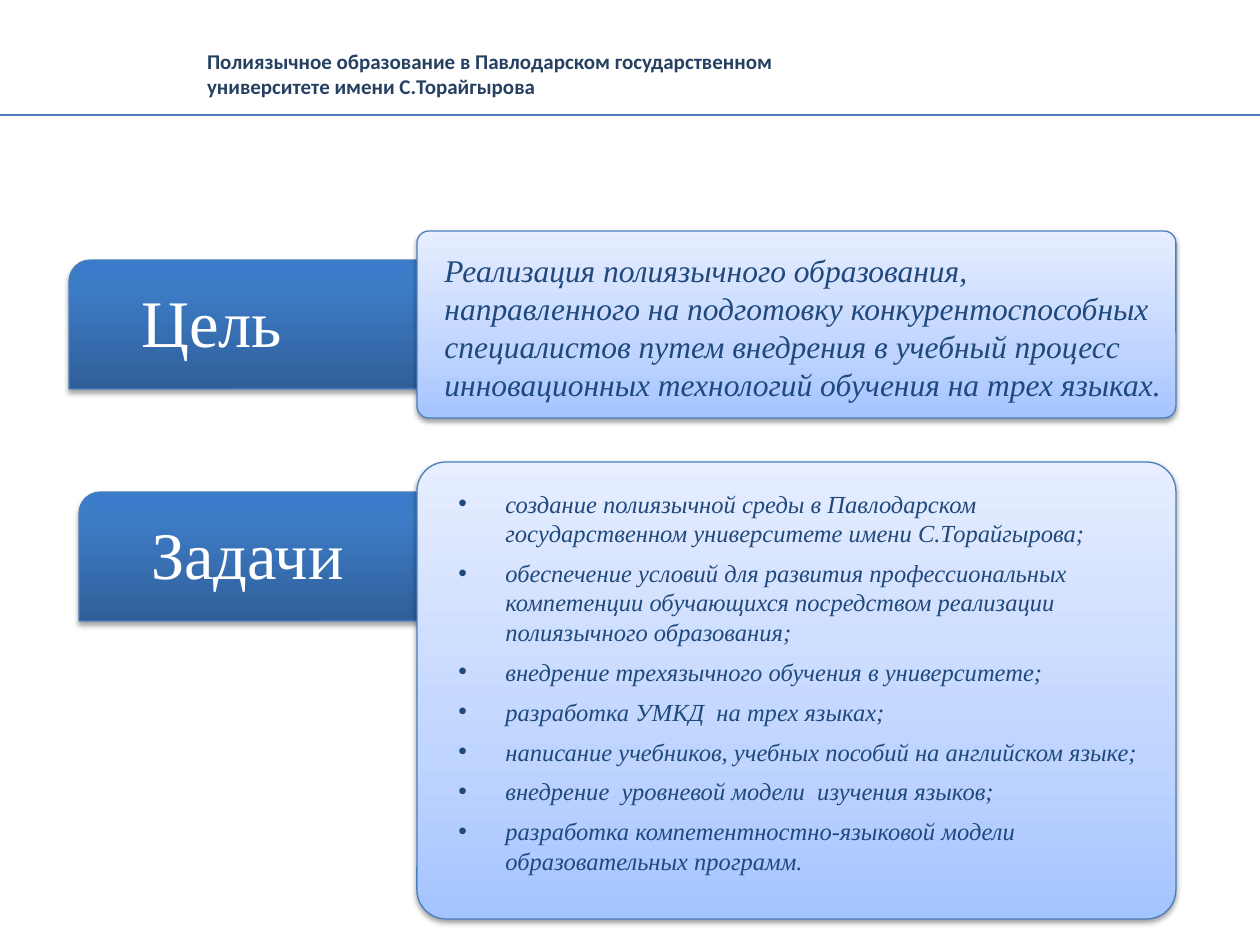
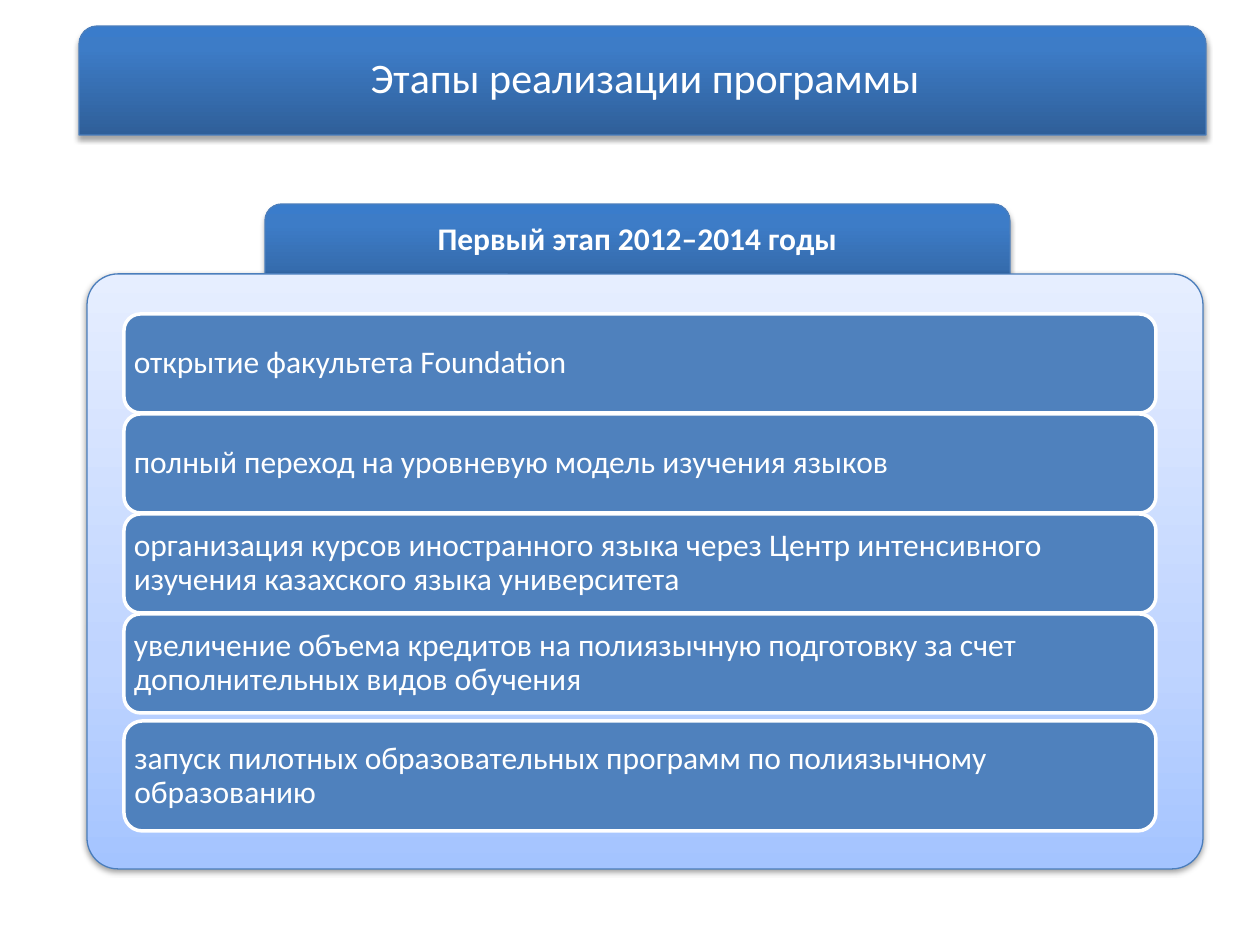
from lxml.etree import SubElement
from pptx import Presentation
from pptx.dml.color import RGBColor
from pptx.enum.shapes import MSO_CONNECTOR, MSO_SHAPE as Form
from pptx.enum.text import MSO_ANCHOR as Anchor, MSO_AUTO_SIZE as AutoSize, PP_ALIGN as Align
from pptx.oxml.ns import qn
from pptx.util import Emu, Pt

EMU_PER_PX = 914400 / 126
COLOURS = {
    "white": "FFFFFF", "row": "4F81BD", "edge": "4B7EBC", "shadow": "000000",
    "header": "254061", "text": "1F497D",
}
GRADIENTS = {
    "label": ((0, "2F5F99"), (80, "3D7CC7"), (100, "3A7CCB")),
    "panel": ((0, "A4C4FF"), (35, "BFD4FF"), (100, "E6EEFF")),
}
SHADOWS = {"label": (35, 1.8), "panel": (38, 1.6)}
SERIF = "Times New Roman"
SANS = "Calibri"
FORMATS = {
    "header": {"name": SANS, "size": Pt(12), "bold": True, "color": "header"},
    "heading": {"name": SANS, "size": Pt(24), "bold": False, "color": "white"},
    "label": {"name": SERIF, "size": Pt(38), "color": "white"},
    "goal": {"name": SERIF, "size": Pt(18), "italic": True, "color": "text"},
    "task": {"name": SERIF, "size": Pt(14), "italic": True, "color": "text"},
    "stage": {"name": SANS, "size": Pt(18), "bold": True, "color": "white"},
    "step": {"name": SANS, "size": Pt(18), "color": "white"},
}
HEADER = [
    "Полиязычное образование в Павлодарском государственном",
    "университете имени С.Торайгырова",
]
GOAL = (
    "Реализация полиязычного образования, направленного на подготовку "
    "конкурентоспособных специалистов путем внедрения в учебный процесс "
    "инновационных технологий обучения на трех языках."
)
TASKS = [
    "создание полиязычной среды в Павлодарском государственном университете имени С.Торайгырова;",
    "обеспечение условий для развития профессиональных компетенции обучающихся "
    "посредством реализации полиязычного образования;",
    "внедрение трехязычного обучения в университете;",
    "разработка УМКД  на трех языках;",
    "написание учебников, учебных пособий на английском языке;",
    "внедрение  уровневой модели  изучения языков;",
    "разработка компетентностно-языковой модели образовательных программ.",
]
STEPS = [
    "открытие факультета Foundation",
    "полный переход на уровневую модель изучения языков",
    "организация курсов иностранного языка через Центр интенсивного "
    "изучения казахского языка университета",
    "увеличение объема кредитов на полиязычную подготовку за счет дополнительных видов обучения",
    "запуск пилотных образовательных программ по полиязычному образованию",
]


def px(value):
    """Turn a length in px into EMU."""
    return Emu(round(value * EMU_PER_PX))


def rgb(name):
    """Look up a palette colour."""
    return RGBColor.from_string(COLOURS[name])


def set_values(target, values):
    """Set each named attribute on the target."""
    for name, value in values.items():
        setattr(target, name, value)


def add_bullet(para):
    """Give a paragraph a hanging round bullet."""
    properties = para._p.get_or_add_pPr()
    properties.set("marL", str(px(47)))
    properties.set("indent", str(-px(47)))
    SubElement(properties, qn("a:buFont"), typeface="Arial")
    SubElement(properties, qn("a:buChar"), char="•")


def write(shape, lines, style, insets=(13, 6, 13, 6), anchor=Anchor.TOP,
          align=Align.LEFT, spacing=1.0, bullets=False):
    """Fill a shape with formatted paragraphs."""
    frame = shape.text_frame
    left, top, right, bottom = map(px, insets)
    set_values(frame, {
        "word_wrap": True, "auto_size": AutoSize.NONE, "vertical_anchor": anchor,
        "margin_left": left, "margin_top": top, "margin_right": right, "margin_bottom": bottom,
    })
    for index, line in enumerate(lines):
        para = frame.add_paragraph() if index else frame.paragraphs[0]
        set_values(para, {"alignment": align, "line_spacing": spacing})
        if bullets:
            if index:
                para.space_before = Pt(6)
            add_bullet(para)
        span = para.add_run()
        span.text = line
        values = dict(FORMATS[style])
        span.font.color.rgb = rgb(values.pop("color"))
        set_values(span.font, values)


def add_form(slide, form, place, edge, width, corner=None):
    """Add an outlined preset shape without the theme shadow."""
    shape = slide.shapes.add_shape(form, *map(px, place))
    shape.shadow.inherit = False
    shape.line.color.rgb = rgb(edge)
    shape.line.width = Pt(width)
    if corner is not None:
        shape.adjustments[0] = corner
    return shape


def add_glossy(slide, form, place, look, corner=None):
    """Add a shape with a vertical gradient and a soft shadow below."""
    shape = add_form(slide, form, place, "edge", 0.75, corner)
    shape.fill.gradient()
    shape.fill.gradient_angle = 90
    properties = shape._element.spPr
    stops = properties.find(qn("a:gradFill")).find(qn("a:gsLst"))
    stops.clear()
    for position, colour in GRADIENTS[look]:
        stop = SubElement(stops, qn("a:gs"), pos=str(position * 1000))
        SubElement(stop, qn("a:srgbClr"), val=colour)
    alpha, distance = SHADOWS[look]
    shadow = SubElement(properties.find(qn("a:effectLst")), qn("a:outerShdw"),
                        blurRad=str(Pt(3.1)), dist=str(Pt(distance)), dir="5400000", rotWithShape="0")
    tint = SubElement(shadow, qn("a:srgbClr"), val=COLOURS["shadow"])
    SubElement(tint, qn("a:alpha"), val=str(alpha * 1000))
    return shape


def add_label(slide, text, left, top):
    """Add a section label with one rounded corner."""
    label = add_glossy(slide, Form.ROUND_2_DIAG_RECTANGLE, (left, top, 465, 129), "label")
    write(label, [text], "label", insets=(66, 15, 0, 0))


def add_rule(slide, top):
    """Draw a full-width line under the header."""
    rule = slide.shapes.add_connector(MSO_CONNECTOR.STRAIGHT, px(1260), px(top), px(0), px(top))
    rule.line.color.rgb = rgb("edge")
    rule.line.width = Pt(1)
    SubElement(rule._element.spPr, qn("a:effectLst"))


def add_step(slide, text, top, height):
    """Add one outlined row of the stage."""
    row = add_form(slide, Form.ROUNDED_RECTANGLE, (124, top, 1032, height), "white", 2)
    row.fill.solid()
    row.fill.fore_color.rgb = rgb("row")
    write(row, [text], "step", insets=(5, 0, 90, 0), anchor=Anchor.MIDDLE, spacing=0.9)


def place_title(slide, lines, place, style, align=Align.LEFT):
    """Move, format and bring forward the title placeholder."""
    title = slide.shapes.title
    set_values(title, dict(zip(("left", "top", "width", "height"), map(px, place))))
    write(title, lines, style, align=align)
    slide.shapes._spTree.append(title._element)


def build_goals(slide):
    """Build the slide with the goal and the tasks."""
    place_title(slide, HEADER, (194, 42, 932, 63), "header")
    add_rule(slide, 115)
    add_label(slide, "Цель", 69, 260)
    add_label(slide, "Задачи", 79, 492)
    goal = add_glossy(slide, Form.ROUNDED_RECTANGLE, (417, 231, 759, 187), "panel", 0.064)
    write(goal, [GOAL], "goal", insets=(24, 17, 6, 0))
    tasks = add_glossy(slide, Form.ROUNDED_RECTANGLE, (417, 462, 759, 457), "panel", 0.064)
    write(tasks, TASKS, "task", insets=(33, 18, 4, 0), bullets=True)


def build_stages(slide):
    """Build the slide with the steps of the first stage."""
    add_glossy(slide, Form.ROUND_2_SAME_RECTANGLE, (79, 26, 1127, 109), "label")
    place_title(slide, ["Этапы реализации программы"], (139, 45, 1012, 63), "heading", Align.CENTER)
    stage = add_glossy(slide, Form.ROUNDED_RECTANGLE, (265, 204, 745, 101), "label")
    write(stage, ["Первый этап 2012–2014 годы"], "stage", insets=(0, 10, 0, 0), align=Align.CENTER)
    add_glossy(slide, Form.ROUNDED_RECTANGLE, (87, 274, 1116, 595), "panel", 0.052)
    for index, step in enumerate(STEPS[:-1]):
        add_step(slide, step, 314 + 100 * index, 99)
    add_step(slide, STEPS[-1], 721, 110)


def main():
    """Build and save the deck."""
    deck = Presentation()
    deck.slide_width, deck.slide_height = px(1260), px(945)
    for build in (build_goals, build_stages):
        build(deck.slides.add_slide(deck.slide_layouts[5]))
    deck.save("out.pptx")


if __name__ == "__main__":
    main()
